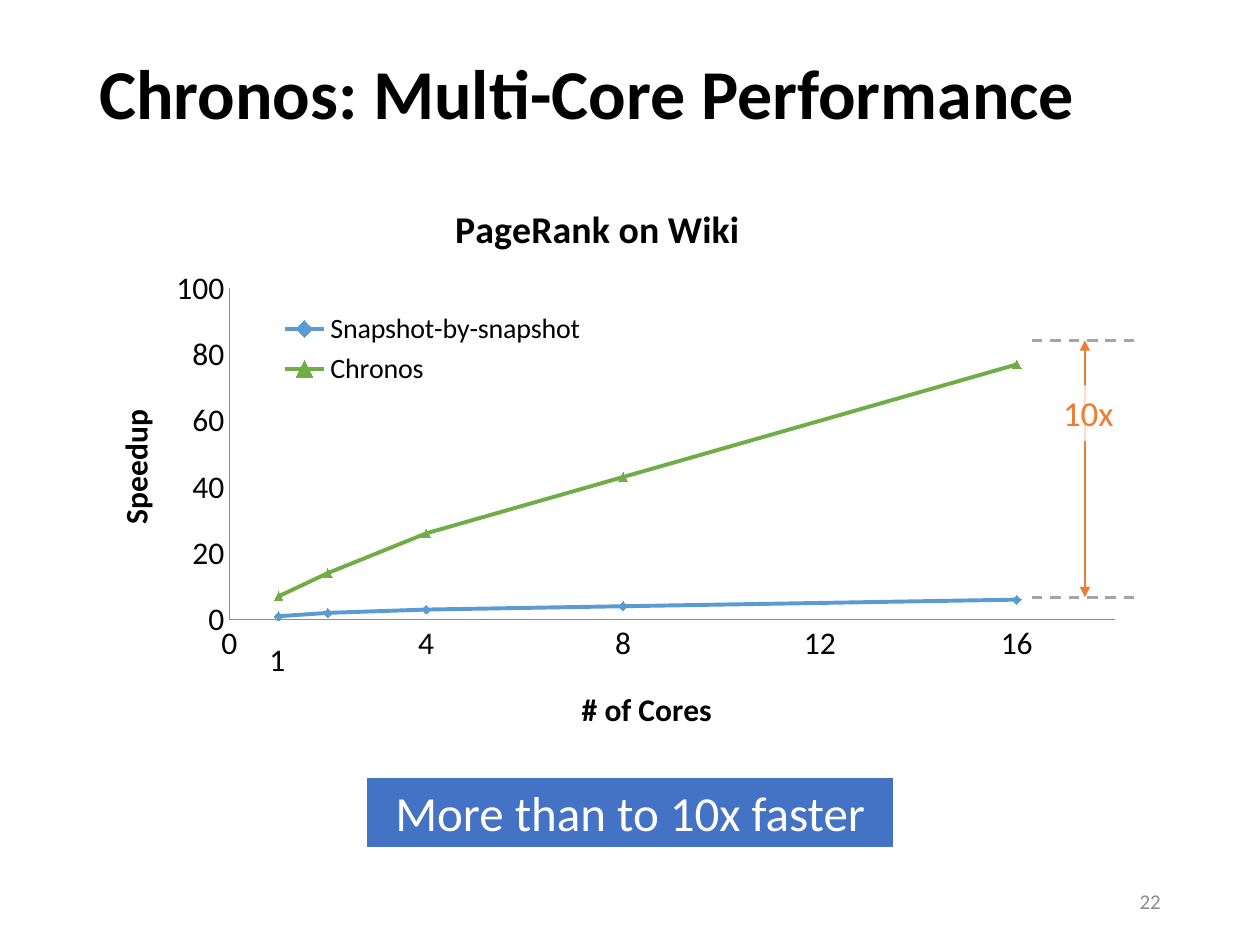
from dataclasses import dataclass

from lxml.etree import SubElement
from pptx import Presentation
from pptx.chart.data import XyChartData
from pptx.dml.color import RGBColor
from pptx.enum.chart import XL_CHART_TYPE as ChartType
from pptx.enum.chart import XL_LEGEND_POSITION as LegendPos
from pptx.enum.chart import XL_MARKER_STYLE as Marker
from pptx.enum.chart import XL_TICK_MARK as TickMark
from pptx.enum.dml import MSO_LINE_DASH_STYLE as Dash
from pptx.enum.shapes import MSO_CONNECTOR as Connector
from pptx.enum.shapes import MSO_SHAPE as Shape
from pptx.enum.text import MSO_ANCHOR as Anchor
from pptx.enum.text import PP_ALIGN as Align
from pptx.oxml import parse_xml
from pptx.oxml.ns import nsdecls, qn
from pptx.util import Cm, Pt


@dataclass(frozen=True)
class Theme:
    font: str = "Calibri"
    black: str = "000000"
    white: str = "FFFFFF"
    banner: str = "4472C4"
    baseline: str = "5B9BD5"
    chronos: str = "70AD47"
    gap: str = "ED7D31"
    guide: str = "A5A5A5"
    axis: str = "8C8C8C"
    title: float = 40
    message: float = 28
    chart_title: float = 21.6
    gap_label: float = 20
    body: float = 18
    legend: float = 16
    footer: float = 12


THEME = Theme()
CORES = (1, 2, 4, 8, 16)
SPEEDUPS = (
    ("Snapshot-by-snapshot", (1, 2, 3, 4, 6), THEME.baseline, Marker.DIAMOND),
    ("Chronos", (7, 14, 26, 43, 77), THEME.chronos, Marker.TRIANGLE),
)


def apply(target, values):
    for name, value in values.items():
        setattr(target, name, value)


def style_font(font, size, color, bold=False):
    apply(font, {"name": THEME.font, "size": Pt(size), "bold": bold})
    font.color.rgb = RGBColor.from_string(color)


def style_line(line, color, width):
    line.color.rgb = RGBColor.from_string(color)
    line.width = Pt(width)


def write(shape, text, size, color, bold=False, align=Align.LEFT,
          anchor=Anchor.TOP, wrap=True):
    frame = shape.text_frame
    apply(frame, {"word_wrap": wrap, "vertical_anchor": anchor})
    paragraph = frame.paragraphs[0]
    paragraph.alignment = align
    run = paragraph.add_run()
    run.text = text
    style_font(run.font, size, color, bold)


def add_label(slide, box, text, size, color, **layout):
    label = slide.shapes.add_textbox(*map(Cm, box))
    write(label, text, size, color, **layout)


def add_box(slide, box, fill, text, size, color, align=Align.LEFT,
            outline=None, opacity=None):
    panel = slide.shapes.add_shape(Shape.RECTANGLE, *map(Cm, box))
    panel.shadow.inherit = False
    panel.fill.solid()
    panel.fill.fore_color.rgb = RGBColor.from_string(fill)
    if opacity:
        tint = panel.fill._xPr.find(".//" + qn("a:srgbClr"))
        SubElement(tint, qn("a:alpha"), val=str(opacity * 1000))
    if outline:
        style_line(panel.line, outline, 1.5)
    else:
        panel.line.fill.background()
    write(panel, text, size, color, align=align)


def add_line(slide, start, end, color, dash=None, arrows=False):
    line = slide.shapes.add_connector(
        Connector.STRAIGHT, *map(Cm, (*start, *end)))
    style_line(line.line, color, 1.5)
    if dash:
        line.line.dash_style = dash
    if arrows:
        outline = line.line._get_or_add_ln()
        for tip in ("a:headEnd", "a:tailEnd"):
            SubElement(outline, qn(tip), type="triangle")
    SubElement(line._element.spPr, qn("a:effectLst"))


def place(element, x, y, w=None, h=None, inner=False):
    """Give a chart part a fixed place, in fractions of the chart."""
    for old in element.findall(qn("c:layout")):
        element.remove(old)
    target = '<c:layoutTarget val="inner"/>' if inner else ""
    parts = [f'<c:{axis}Mode val="edge"/>' for axis in "xy"]
    parts += [f'<c:{name} val="{value}"/>'
              for name, value in zip("xywh", (x, y, w, h)) if value is not None]
    layout = parse_xml(f'<c:layout {nsdecls("c")}><c:manualLayout>{target}'
                       f'{"".join(parts)}</c:manualLayout></c:layout>')
    before = element.find(qn("c:tx"))
    if before is None:
        before = element.find(qn("c:legendPos"))
    if before is None:
        element.insert(0, layout)
    else:
        before.addnext(layout)


def set_title(owner, text, size, x, y):
    owner.has_title = True
    title = owner.chart_title if hasattr(owner, "chart_title") else owner.axis_title
    run = title.text_frame.paragraphs[0].add_run()
    run.text = text
    style_font(run.font, size, THEME.black, bold=True)
    place(title._element, x, y)


def style_axis(axis, maximum, step):
    apply(axis, {
        "minimum_scale": 0, "maximum_scale": maximum, "major_unit": step,
        "has_major_gridlines": False, "has_minor_gridlines": False,
        "major_tick_mark": TickMark.NONE, "minor_tick_mark": TickMark.NONE,
    })
    apply(axis.tick_labels, {"number_format": "General",
                             "number_format_is_linked": False})
    style_line(axis.format.line, THEME.axis, 0.75)


def add_speedup_chart(slide, box):
    data = XyChartData()
    for name, speedups, _, _ in SPEEDUPS:
        series = data.add_series(name)
        for point in zip(CORES, speedups):
            series.add_data_point(*point)
    chart = slide.shapes.add_chart(
        ChartType.XY_SCATTER_LINES, *map(Cm, box), data).chart
    style_font(chart.font, THEME.body, THEME.black)

    # Titles, axes and plot area
    set_title(chart, "PageRank on Wiki", THEME.chart_title, 0.34, 0.02)
    set_title(chart.category_axis, "# of Cores", THEME.body, 0.46, 0.86)
    set_title(chart.value_axis, "Speedup", THEME.body, 0.02, 0.38)
    style_axis(chart.category_axis, 18, 4)
    style_axis(chart.value_axis, 100, 20)
    plot = chart.plots[0]
    plot.vary_by_categories = False
    place(chart._chartSpace.chart.plotArea, 0.134, 0.18, 0.833, 0.572, inner=True)

    # Legend over the plot
    chart.has_legend = True
    apply(chart.legend, {"position": LegendPos.BOTTOM, "include_in_layout": False})
    style_font(chart.legend.font, THEME.legend, THEME.black)
    place(chart.legend._element, 0.17, 0.21, 0.31, 0.15)

    # Series
    for series, (_, _, color, symbol) in zip(plot.series, SPEEDUPS):
        series.smooth = False
        style_line(series.format.line, color, 2.25)
        apply(series.marker, {"style": symbol, "size": 5})
        series.marker.format.fill.solid()
        series.marker.format.fill.fore_color.rgb = RGBColor.from_string(color)
        style_line(series.marker.format.line, color, 0.75)


def main():
    deck = Presentation()
    apply(deck, {"slide_width": Cm(25.4), "slide_height": Cm(19.05)})
    slide = deck.slides.add_slide(deck.slide_layouts[6])

    # Title, page number and message
    add_label(slide, (1.75, 0, 21.9, 3.68), "Chronos: Multi-Core Performance",
              THEME.title, THEME.black, bold=True, anchor=Anchor.MIDDLE)
    add_label(slide, (17.93, 17.65, 5.72, 1.02), "22", THEME.footer, THEME.axis,
              align=Align.RIGHT, anchor=Anchor.MIDDLE)
    add_box(slide, (7.37, 15.65, 10.67, 1.45), THEME.banner,
            "More than to 10x faster", THEME.message, THEME.white,
            align=Align.CENTER, outline=THEME.white)

    # Chart, with the extra label for one core
    add_speedup_chart(slide, (1.75, 3.71, 21.44, 11.68))
    add_label(slide, (5.18, 12.78, 0.84, 1.02), "1", THEME.body, THEME.black,
              wrap=False)

    # Gap between the two curves at 16 cores
    top, bottom, middle = 6.86, 12.04, 21.87
    add_line(slide, (middle, top), (middle, bottom), THEME.gap, arrows=True)
    add_box(slide, (21.18, 7.77, 1.75, 1.12), THEME.white, "10x",
            THEME.gap_label, THEME.gap, opacity=75)
    for level in (top, bottom):
        add_line(slide, (20.8, level), (22.94, level), THEME.guide, dash=Dash.DASH)

    deck.save("out.pptx")


if __name__ == "__main__":
    main()
